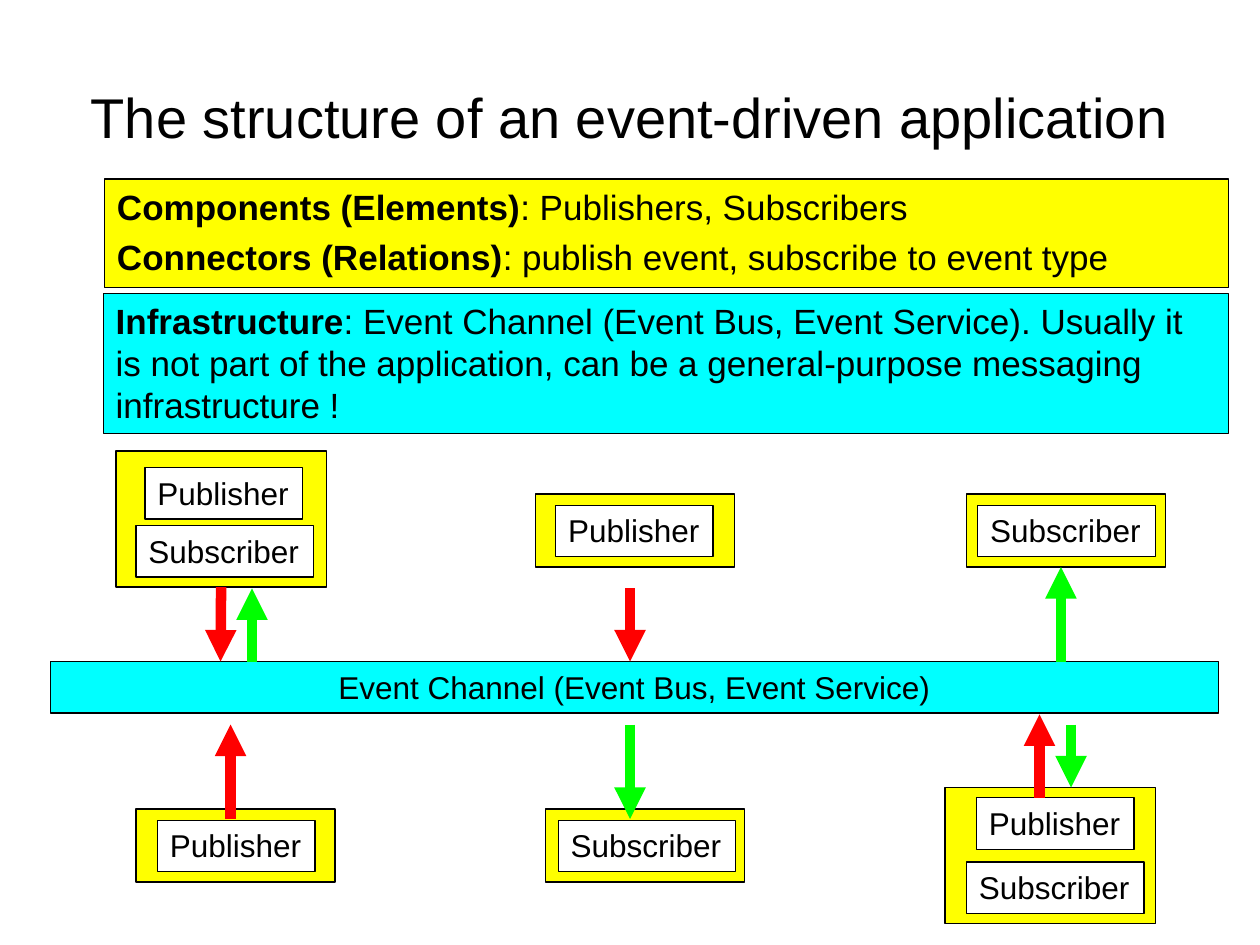
from lxml import etree
from pptx import Presentation
from pptx.dml.color import RGBColor
from pptx.enum import shapes, text
from pptx.oxml.ns import qn
from pptx.util import Inches, Pt

BLACK, WHITE = "000000", "FFFFFF"
YELLOW, CYAN = "FFFF00", "00FFFF"
RED, GREEN = "FF0000", "00FF00"
CENTER = text.PP_ALIGN.CENTER

# Each outer frame: left, top, width, height
FRAMES = {
    "top right": (7.67, 3.92, 1.58, 0.58),
    "top middle": (4.25, 3.92, 1.58, 0.58),
    "bottom left": (1.08, 6.42, 1.58, 0.58),
    "bottom middle": (4.33, 6.42, 1.58, 0.58),
    "top left": (0.92, 3.58, 1.67, 1.08),
    "bottom right": (7.5, 6.25, 1.67, 1.08),
}
# Each role: label width and the left, top of its labels
ROLES = {
    "Publisher": (1.25, [(1.15, 3.71), (4.41, 4.01), (1.25, 6.51), (7.75, 6.33)]),
    "Subscriber": (1.41, [(1.08, 4.17), (4.43, 6.51), (7.76, 4.01), (7.67, 6.84)]),
}
# Each arrow: x, start y, end y
PUBLISH_ARROWS = [(8.25, 6.33, 5.67), (5, 4.67, 5.25), (1.83, 6.5, 5.75)]
SUBSCRIBE_ARROWS = [(2, 5.25, 4.67), (8.42, 5.25, 4.5), (5, 5.75, 6.5), (8.5, 5.75, 6.25)]


def color(value):
    return RGBColor.from_string(value)


def add_box(page, left, top, width, height, fill):
    box = page.shapes.add_shape(
        shapes.MSO_SHAPE.RECTANGLE, *map(Inches, (left, top, width, height)))
    box.shadow.inherit = False
    box.fill.solid()
    box.fill.fore_color.rgb = color(fill)
    box.line.color.rgb = color(BLACK)
    box.line.width = Pt(0.75)
    return box


def write(box, paragraphs, size=18, align=text.PP_ALIGN.LEFT, anchor=text.MSO_ANCHOR.TOP,
          wrap=True, before=0):
    """Fill a box; each paragraph is a list of (words, bold) pairs."""
    frame = box.text_frame
    frame.word_wrap = wrap
    frame.vertical_anchor = anchor
    for index, spans in enumerate(paragraphs):
        para = frame.add_paragraph() if index else frame.paragraphs[0]
        para.alignment = align
        para.space_before = Pt(before)
        for words, bold in spans:
            span = para.add_run()
            span.text = words
            span.font.name = "Arial"
            span.font.size = Pt(size)
            span.font.bold = bold
            span.font.color.rgb = color(BLACK)


def add_arrow(page, x, start, end, stroke):
    arrow = page.shapes.add_connector(
        shapes.MSO_CONNECTOR.STRAIGHT, Inches(x), Inches(start), Inches(x), Inches(end))
    arrow.line.color.rgb = color(stroke)
    arrow.line.width = Pt(6)
    etree.SubElement(arrow.line._get_or_add_ln(), qn("a:tailEnd"), type="triangle")
    etree.SubElement(arrow._element.spPr, qn("a:effectLst"))
    return arrow


def add_title(page, words):
    box = page.shapes.add_textbox(Inches(0.5), Inches(0.3), Inches(9), Inches(1.25))
    write(box, [[(words, False)]], size=32, align=CENTER, anchor=text.MSO_ANCHOR.MIDDLE)


def add_definitions(page):
    parts = add_box(page, 0.83, 1.42, 8.92, 0.86, YELLOW)
    write(parts, [
        [("Components (Elements)", True), (": Publishers, Subscribers", False)],
        [("Connectors (Relations)", True),
         (": publish event, subscribe to event type", False)],
    ], size=20, before=5)
    infrastructure = add_box(page, 0.82, 2.33, 8.93, 1.11, CYAN)
    write(infrastructure, [[
        ("Infrastructure", True),
        (": Event Channel (Event Bus, Event Service). Usually it is not part of the "
         "application, can be a general-purpose messaging infrastructure !", False),
    ]], size=20, before=5)


def main():
    deck = Presentation()
    deck.slide_width, deck.slide_height = Inches(10), Inches(7.5)
    page = deck.slides.add_slide(deck.slide_layouts[6])

    frames = {name: add_box(page, *place, YELLOW) for name, place in FRAMES.items()}
    add_title(page, "The structure of an event-driven application")
    for role, (width, places) in ROLES.items():
        for left, top in places:
            label = add_box(page, left, top, width, 0.41, WHITE)
            write(label, [[(role, False)]], wrap=False)

    channel = add_box(page, 0.4, 5.25, 9.27, 0.41, CYAN)
    write(channel, [[("Event Channel (Event Bus, Event Service)", False)]], align=CENTER)

    add_arrow(page, 1.75, 4.67, 5.25, RED).begin_connect(frames["top left"], 2)
    for stroke, arrows in ((RED, PUBLISH_ARROWS), (GREEN, SUBSCRIBE_ARROWS)):
        for x, start, end in arrows:
            add_arrow(page, x, start, end, stroke)

    add_definitions(page)
    deck.save("out.pptx")


if __name__ == "__main__":
    main()
